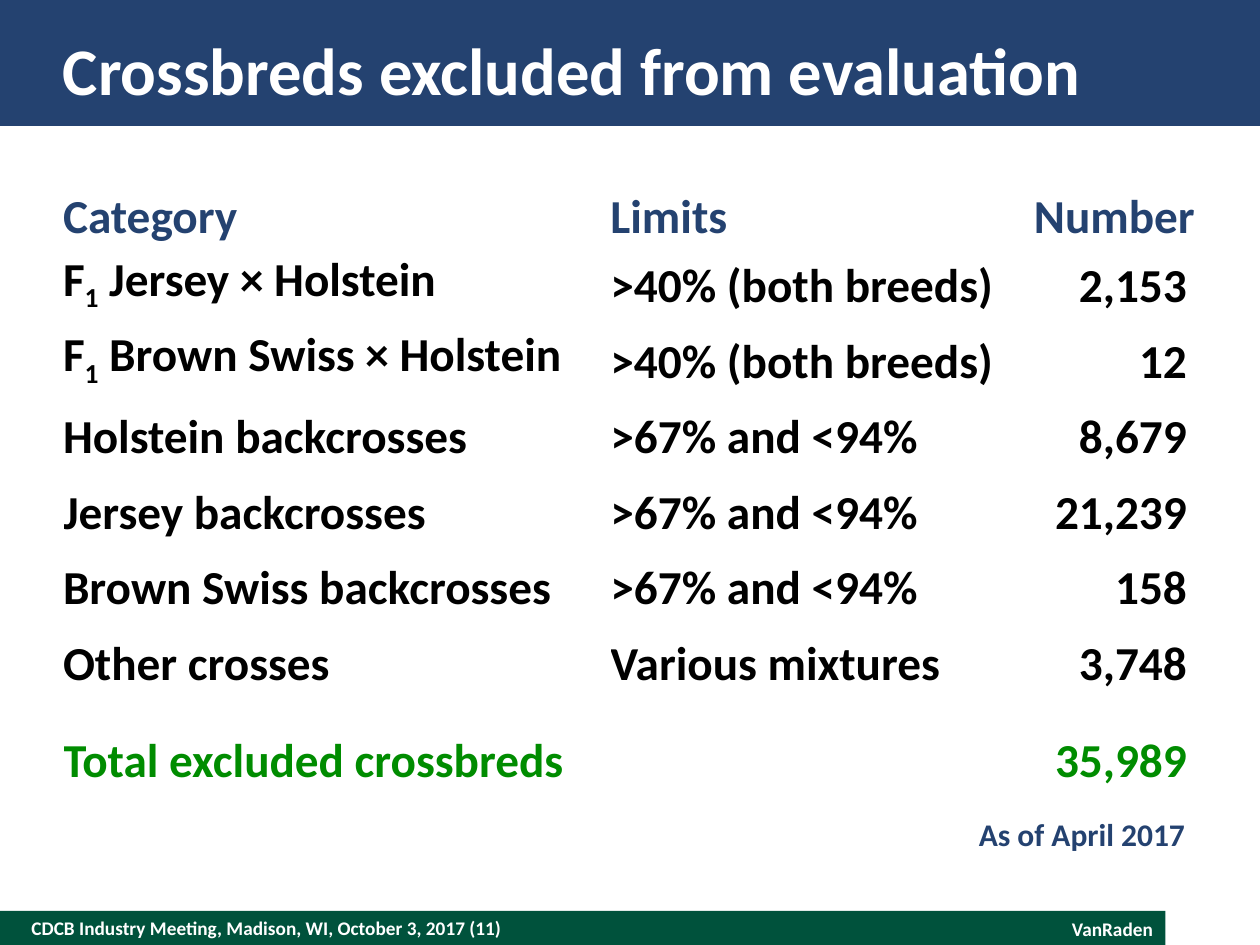
from pptx import Presentation
from pptx.dml.color import RGBColor
from pptx.enum.shapes import MSO_SHAPE as Shape
from pptx.enum.text import MSO_ANCHOR as Anchor, PP_ALIGN as Align
from pptx.util import Inches, Pt

NAVY = RGBColor(0x24, 0x42, 0x70)
FOREST = RGBColor(0x00, 0x52, 0x3C)
GREEN = RGBColor(0x00, 0x8C, 0x00)
BLACK = RGBColor(0x00, 0x00, 0x00)
WHITE = RGBColor(0xFF, 0xFF, 0xFF)

COLUMNS, ROWS = 40, 30
FOOTER_TOP = 28.92
FOOTER_HEIGHT = ROWS - FOOTER_TOP
NO_INSETS = (0, 0, 0, 0)
BOX_INSETS = (0.1, 0.05, 0.1, 0.05)

HEADINGS = ("Category", "Limits", "Number")
# Text between two underscores is set as a subscript.
CROSSES = (
    ("F_1_ Jersey × Holstein", ">40% (both breeds)", "2,153"),
    ("F_1_ Brown Swiss × Holstein", ">40% (both breeds)", "12"),
    ("Holstein backcrosses", ">67% and <94%", "8,679"),
    ("Jersey backcrosses", ">67% and <94%", "21,239"),
    ("Brown Swiss backcrosses", ">67% and <94%", "158"),
    ("Other crosses", "Various mixtures", "3,748"),
)
TOTAL = ("Total excluded crossbreds", "", "35,989")


def grid(*units):
    """Turn grid units (40 columns by 30 rows of a quarter inch) into lengths."""
    return [Inches(unit / 4) for unit in units]


class SlideBuilder:
    font_name = "Calibri"
    table_size = 27

    def __init__(self, deck):
        self.slide = deck.slides.add_slide(deck.slide_layouts[6])

    def band(self, left, top, width, height, color):
        band = self.slide.shapes.add_shape(
            Shape.RECTANGLE, *grid(left, top, width, height))
        band.shadow.inherit = False
        band.fill.solid()
        band.fill.fore_color.rgb = color
        band.line.fill.background()

    def add_text(self, para, text, size, color, align=Align.LEFT):
        """Add bold text, setting every second piece between underscores low."""
        para.alignment = align
        for index, piece in enumerate(text.split("_")):
            span = para.add_run()
            span.text = piece
            font = span.font
            font.name, font.size, font.bold = self.font_name, Pt(size), True
            font.color.rgb = color
            if index % 2:
                font._element.set("baseline", "-25000")

    def label(self, left, top, width, height, text, size, color=WHITE,
              align=Align.LEFT, anchor=Anchor.MIDDLE, insets=NO_INSETS,
              wrap=True):
        box = self.slide.shapes.add_textbox(*grid(left, top, width, height))
        frame = box.text_frame
        frame.word_wrap = wrap
        frame.vertical_anchor = anchor
        (frame.margin_left, frame.margin_top,
         frame.margin_right, frame.margin_bottom) = map(Inches, insets)
        self.add_text(frame.paragraphs[0], text, size, color, align)

    def table(self, left, top, widths, heights):
        frame = self.slide.shapes.add_table(
            len(heights), len(widths),
            *grid(left, top, sum(widths), sum(heights)))
        table = frame.table
        table.first_row = table.horz_banding = False
        for column, width in zip(table.columns, grid(*widths)):
            column.width = width
        for row, height in zip(table.rows, grid(*heights)):
            row.height = height
        return table

    def table_row(self, row, texts, color, last_align=Align.RIGHT,
                  spacing=None, right=0.08, bottom=0):
        """Fill a row; the last column has its own alignment and right margin."""
        last = len(texts) - 1
        for index, (cell, text) in enumerate(zip(row.cells, texts)):
            cell.fill.background()
            cell.margin_left = cell.margin_top = 0
            cell.margin_right = Inches(right if index == last else 0)
            cell.margin_bottom = Inches(bottom)
            if text:
                para = cell.text_frame.paragraphs[0]
                if spacing:
                    para.line_spacing = Pt(spacing)
                align = last_align if index == last else Align.LEFT
                self.add_text(para, text, self.table_size, color, align)


def main():
    deck = Presentation()
    deck.slide_width, deck.slide_height = grid(COLUMNS, ROWS)
    page = SlideBuilder(deck)

    page.band(0, FOOTER_TOP, 37, FOOTER_HEIGHT, FOREST)
    page.band(0, 0, COLUMNS, 4, NAVY)
    page.label(1, FOOTER_TOP, 28, FOOTER_HEIGHT,
               "CDCB Industry Meeting, Madison, WI, October 3, 2017 (11)", 11)
    page.label(29, FOOTER_TOP, 8, 1.16, "VanRaden", 11, align=Align.RIGHT,
               anchor=Anchor.TOP, insets=BOX_INSETS)
    page.label(2, 0.8, 36, 2.8, "Crossbreds excluded from evaluation", 38)

    table = page.table(2, 6, (17.38, 13.38, 5.24),
                       (2, *[2.4] * len(CROSSES), 3.56))
    heading_row, *cross_rows, total_row = table.rows
    page.table_row(heading_row, HEADINGS, NAVY, Align.CENTER,
                   right=0, bottom=0.05)
    for row, texts in zip(cross_rows, CROSSES):
        page.table_row(row, texts, BLACK, spacing=36)
    page.table_row(total_row, TOTAL, GREEN, spacing=48)

    page.label(30.68, 25.68, 7.44, 1.6, "As of April 2017", 18, NAVY,
               anchor=Anchor.TOP, insets=BOX_INSETS, wrap=False)
    deck.save("out.pptx")


if __name__ == "__main__":
    main()
